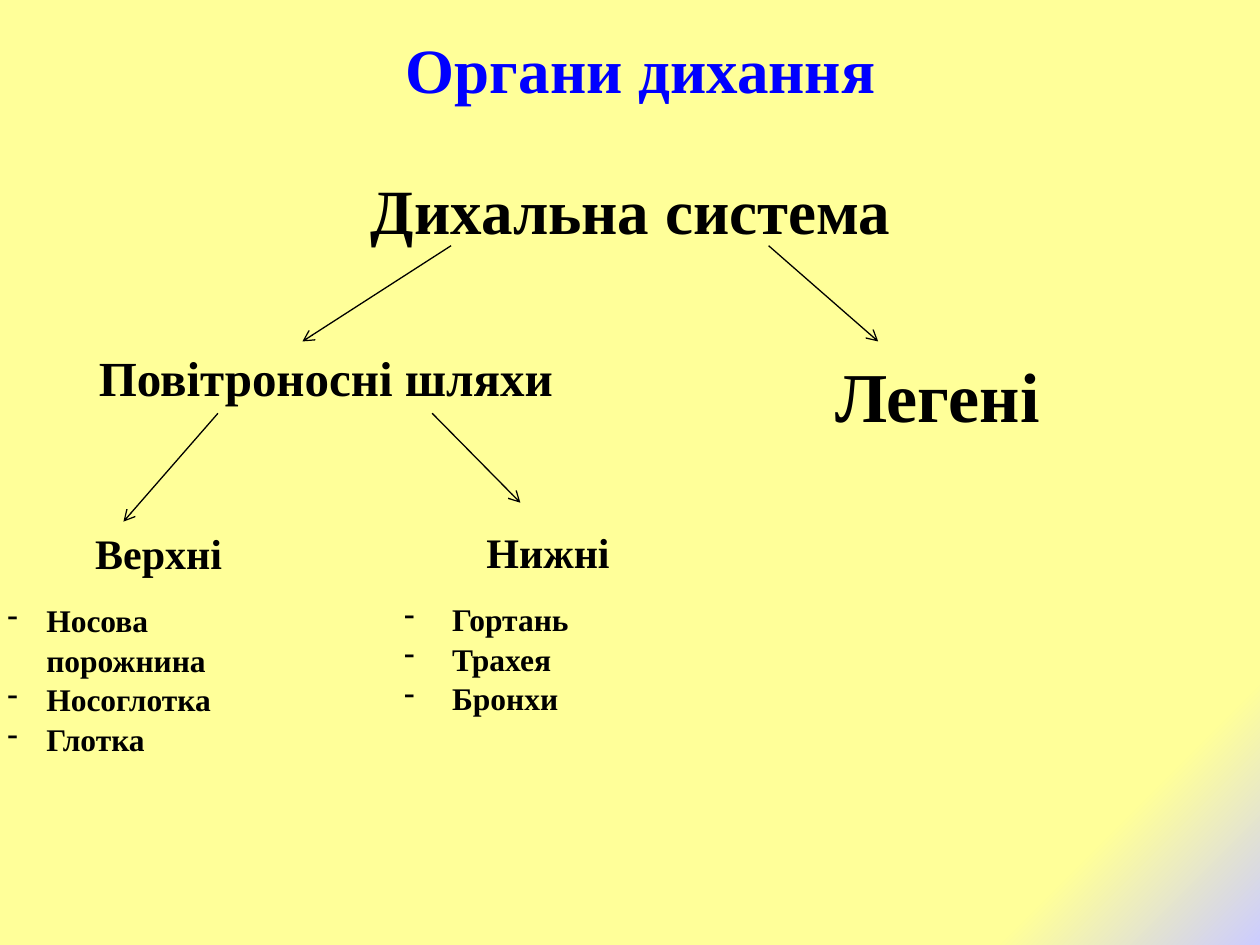
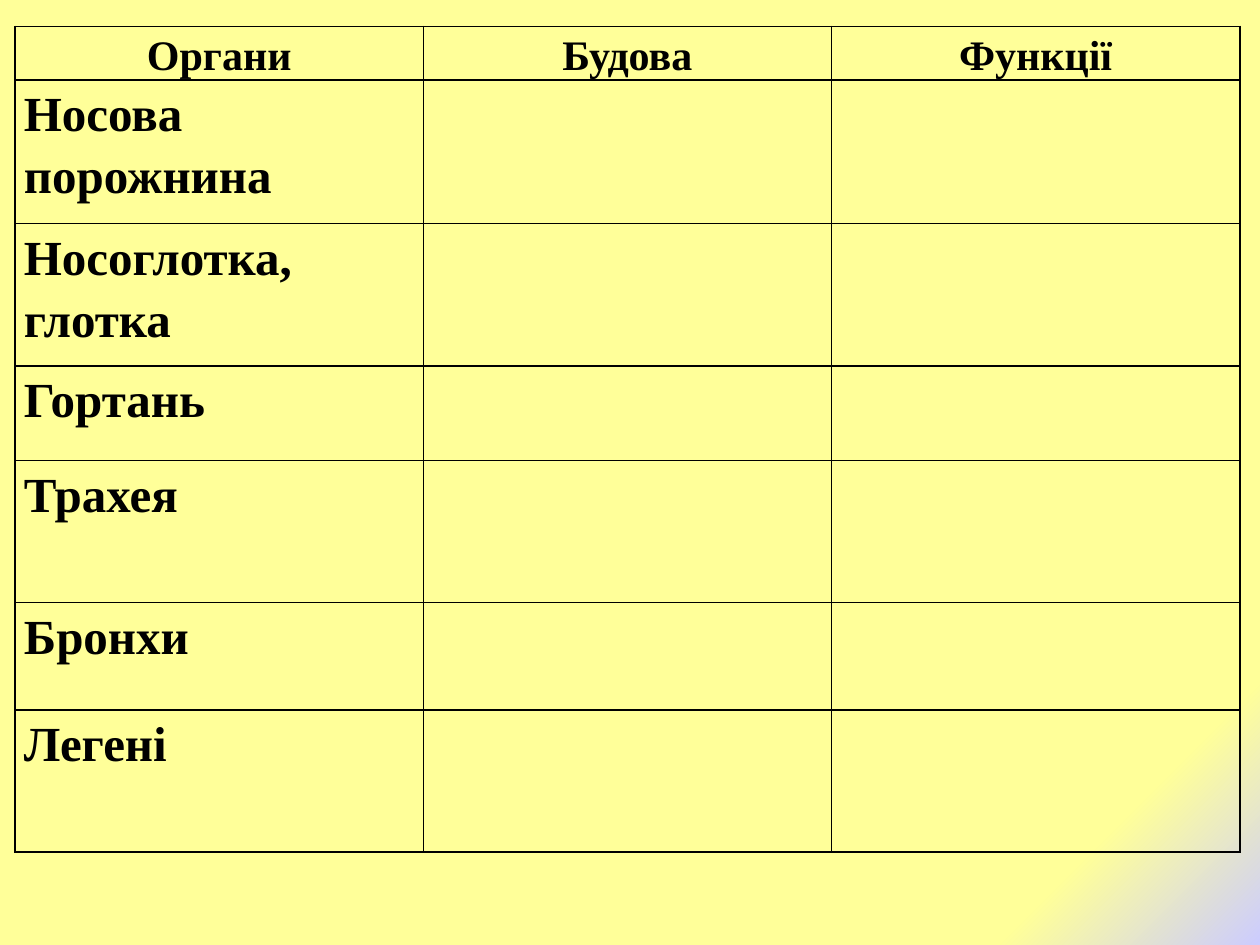
from dataclasses import dataclass

from lxml.etree import SubElement
from pptx import Presentation
from pptx.dml.color import RGBColor
from pptx.enum.shapes import MSO_CONNECTOR as Connector
from pptx.enum.text import MSO_AUTO_SIZE as AutoSize, PP_ALIGN as Align
from pptx.oxml.ns import qn
from pptx.util import Emu, Inches, Pt

COLUMNS, ROWS = 100, 75


@dataclass(frozen=True)
class Theme:
    font: str = "Times New Roman"
    title: str = "0000FF"
    ink: str = "000000"
    paper: str = "FFFF99"
    corner: str = "CCCCFF"
    title_size: int = 36
    organ_size: int = 40
    branch_size: int = 28
    heading_size: int = 24
    item_size: int = 18
    arrow_width: float = 0.75
    border_width: int = 1


THEME = Theme()


@dataclass(frozen=True)
class Box:
    left: int
    top: int
    width: int
    height: int

    def point(self, column, row):
        return (Emu(round(self.left + self.width * column / COLUMNS)),
                Emu(round(self.top + self.height * row / ROWS)))

    def area(self, column, row, columns, rows):
        return Box(*self.point(column, row),
                   Emu(round(self.width * columns / COLUMNS)),
                   Emu(round(self.height * rows / ROWS)))

    def frame(self):
        return self.left, self.top, self.width, self.height


def style_paragraph(paragraph, size, color=THEME.ink, align=Align.CENTER):
    paragraph.alignment = align
    for run in paragraph.runs:
        run.font.name = THEME.font
        run.font.size = Pt(size)
        run.font.bold = True
        run.font.color.rgb = RGBColor.from_string(color)


def add_label(slide, box, text, size, color=THEME.ink, wrap=True):
    shape = slide.shapes.add_textbox(*box.frame())
    text_frame = shape.text_frame
    text_frame.word_wrap = wrap
    text_frame.auto_size = AutoSize.SHAPE_TO_FIT_TEXT if wrap else AutoSize.NONE
    text_frame.text = text
    style_paragraph(text_frame.paragraphs[0], size, color)
    return text_frame


def add_list(slide, box, heading, items, indent):
    text_frame = add_label(slide, box, heading, THEME.heading_size)
    for index, item in enumerate(items):
        paragraph = text_frame.add_paragraph()
        paragraph.text = item
        style_paragraph(paragraph, THEME.item_size, align=Align.LEFT)
        paragraph.line_spacing = 1.05
        paragraph.space_before = Pt(0 if index else 12)
        properties = paragraph._p.get_or_add_pPr()
        properties.set("marL", str(Inches(indent)))
        properties.set("indent", str(-Inches(indent)))
        SubElement(properties, qn("a:buChar"), char="-")


def add_arrow(slide, start, end):
    connector = slide.shapes.add_connector(Connector.STRAIGHT, *start, *end)
    connector.line.color.rgb = RGBColor.from_string(THEME.ink)
    connector.line.width = Pt(THEME.arrow_width)
    properties = connector._element.spPr
    SubElement(properties.find(qn("a:ln")), qn("a:tailEnd"), type="arrow")
    SubElement(properties, qn("a:effectLst"))


def set_borders(cell):
    properties = cell._tc.get_or_add_tcPr()
    for side in ("lnL", "lnR", "lnT", "lnB"):
        line = SubElement(properties, qn(f"a:{side}"), w=str(Pt(THEME.border_width)))
        fill = SubElement(line, qn("a:solidFill"))
        SubElement(fill, qn("a:srgbClr"), val=THEME.ink)
    cell.fill.background()


def set_background(master):
    fill = master.background.fill
    fill.gradient()
    fill.gradient_angle = 315
    for stop, color, position in zip(
            fill.gradient_stops, (THEME.paper, THEME.corner), (0.88, 1)):
        stop.color.rgb = RGBColor.from_string(color)
        stop.position = position


def build_system_slide(slide, box):
    add_label(slide, box.area(7.5, 1.9, 86.7, 6.7), "Органи дихання",
              THEME.title_size, THEME.title, wrap=False)
    for text, size, place in (
            ("Дихальна система", THEME.title_size, (2.8, 13.1, 94.5, 7.1)),
            ("Повітроносні шляхи ", THEME.branch_size, (5.1, 27.1, 42.5, 5.7)),
            ("Легені", THEME.organ_size, (61, 27.5, 26.8, 7.7))):
        add_label(slide, box.area(*place), text, size)
    for heading, items, indent, place in (
            ("Верхні", ("Носова порожнина", "Носоглотка", "Глотка"),
             0.31, (-0.4, 41.4, 26, 21.9)),
            ("Нижні", ("Гортань", "Трахея", "Бронхи"),
             0.38, (31.1, 41.3, 24.8, 19.9))):
        add_list(slide, box.area(*place), heading, items, indent)
    for start, end in (
            ((35.8, 19.5), (24, 27.1)),
            ((61, 19.5), (69.7, 27.1)),
            ((17.3, 32.8), (9.8, 41.4)),
            ((34.3, 32.8), (41.3, 39.9))):
        add_arrow(slide, box.point(*start), box.point(*end))


def build_table_slide(slide, box):
    headings = ("Органи", "Будова", "Функції")
    organs = ("Носова порожнина", "Носоглотка, глотка", "Гортань",
              "Трахея", "Бронхи", "Легені")
    row_heights = (3.8, 11.4, 11.3, 7.5, 11.3, 8.5, 11.3)
    table_box = box.area(1.2, 2.1, 97.2, sum(row_heights))
    graphic = slide.shapes.add_table(
        len(row_heights), len(headings), *table_box.frame())
    table = graphic.table
    table.first_row = table.horz_banding = False
    table._tbl.tblPr.find(qn("a:tableStyleId")).text = (
        "{2D5ABB26-0587-4C30-8999-92F81FD0307C}")
    for row, height in zip(table.rows, row_heights):
        row.height = Emu(round(box.height * height / ROWS))
    contents = [headings] + [(organ, "", "") for organ in organs]
    for row_index, texts in enumerate(contents):
        size, align = ((THEME.branch_size, Align.JUSTIFY) if row_index
                       else (THEME.heading_size, Align.CENTER))
        for column_index, text in enumerate(texts):
            cell = table.cell(row_index, column_index)
            cell.margin_left = cell.margin_right = Inches(0.07)
            cell.margin_top = cell.margin_bottom = 0
            cell.text = text
            paragraph = cell.text_frame.paragraphs[0]
            paragraph.line_spacing = 1.15
            style_paragraph(paragraph, size, align=align)
            set_borders(cell)


def main():
    presentation = Presentation()
    presentation.slide_width = Inches(10)
    presentation.slide_height = Inches(7.5)
    set_background(presentation.slide_master)
    page = Box(0, 0, presentation.slide_width, presentation.slide_height)
    for build in (build_system_slide, build_table_slide):
        build(presentation.slides.add_slide(presentation.slide_layouts[6]), page)
    presentation.save("out.pptx")


if __name__ == "__main__":
    main()
